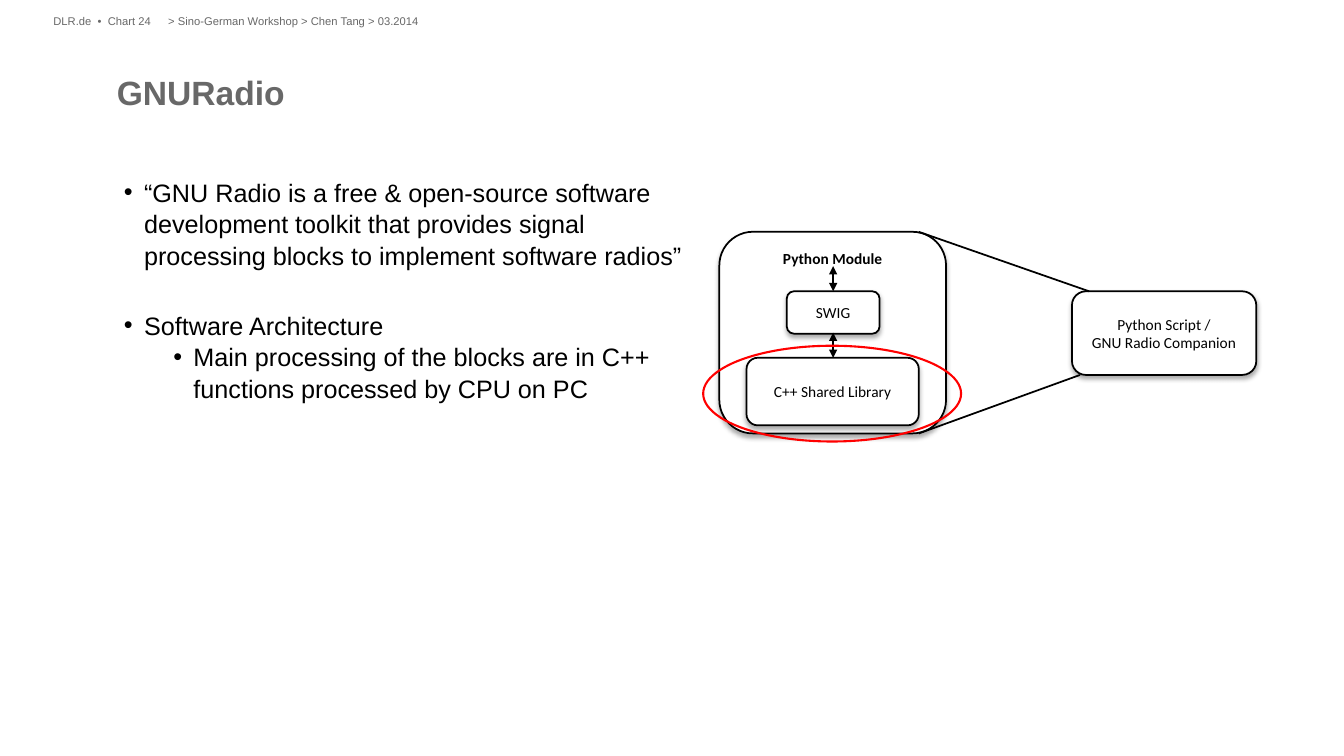
from lxml.etree import SubElement
from pptx import Presentation
from pptx.dml.color import RGBColor
from pptx.enum.shapes import MSO_CONNECTOR, MSO_SHAPE
from pptx.enum.text import MSO_ANCHOR, PP_ALIGN
from pptx.oxml.ns import qn
from pptx.util import Inches, Pt

BLACK, WHITE, GREY, RED = "000000", "FFFFFF", "686868", "FF0000"


def rgb(value):
    return RGBColor.from_string(value)


def add_xml(parent, tag, **attributes):
    return SubElement(parent, qn(tag), attributes)


class SlideBuilder:
    text_font = "Arial"
    diagram_font = "Calibri"
    line_width = 1.25

    def __init__(self, slide):
        self.s = slide

    def style(self, p, size, color=BLACK, name=None, bold=False):
        f = p.font
        f.name, f.size, f.bold = name or self.text_font, Pt(size), bold
        f.color.rgb = rgb(color)

    def frame(self, sp, anchor=MSO_ANCHOR.TOP, inset=0.0):
        tf = sp.text_frame
        tf.word_wrap = True
        tf.vertical_anchor = anchor
        tf.margin_left = tf.margin_right = Inches(inset)
        tf.margin_top = tf.margin_bottom = Inches(inset)
        return tf

    def title(self, text, x, y, w, h):
        sp = self.s.shapes.title
        sp.left, sp.top, sp.width, sp.height = map(Inches, (x, y, w, h))
        p = self.frame(sp).paragraphs[0]
        p.text, p.alignment = text, PP_ALIGN.LEFT
        self.style(p, 24, GREY, bold=True)

    def text_box(self, x, y, w, h):
        return self.frame(self.s.shapes.add_textbox(*map(Inches, (x, y, w, h))))

    def header(self, text, x, w):
        p = self.text_box(x, 0.14, w, 0.16).paragraphs[0]
        p.text = text
        self.style(p, 8, GREY)

    def bullets(self, items, x, y, w, h):
        """Items are (text, level, left margin in inches, space before in points)."""
        tf = self.text_box(x, y, w, h)
        for i, (text, level, margin, before) in enumerate(items):
            p = tf.add_paragraph() if i else tf.paragraphs[0]
            p.text, p.level = text, level
            p.line_spacing, p.space_before = 1.05, Pt(before)
            pPr = p._p.get_or_add_pPr()
            pPr.set("marL", str(Inches(margin)))
            pPr.set("indent", str(Inches(-0.2)))
            add_xml(pPr, "a:buFont", typeface="Arial")
            add_xml(pPr, "a:buChar", char="•")
            self.style(p, 18)

    def outline(self, kind, x, y, w, h, color, width):
        sp = self.s.shapes.add_shape(kind, *map(Inches, (x, y, w, h)))
        sp.shadow.inherit = False
        sp.fill.background()
        sp.line.color.rgb, sp.line.width = rgb(color), Pt(width)
        return sp

    def box(self, lines, x, y, w, h, anchor=MSO_ANCHOR.MIDDLE, bold=False):
        sp = self.outline(MSO_SHAPE.ROUNDED_RECTANGLE, x, y, w, h, BLACK, self.line_width)
        sp.fill.solid()
        sp.fill.fore_color.rgb = rgb(WHITE)
        effects = sp._element.spPr.find(qn("a:effectLst"))
        shadow = add_xml(effects, "a:outerShdw", blurRad=str(Pt(3.5)), dist=str(Pt(2.2)),
                         dir="5400000", rotWithShape="0")
        add_xml(add_xml(shadow, "a:srgbClr", val=BLACK), "a:alpha", val="32000")
        tf = self.frame(sp, anchor, 0.07)
        for i, line in enumerate(lines):
            p = tf.add_paragraph() if i else tf.paragraphs[0]
            p.text, p.alignment = line, PP_ALIGN.CENTER
            self.style(p, 11, name=self.diagram_font, bold=bold)

    def line(self, x1, y1, x2, y2, arrows=False):
        c = self.s.shapes.add_connector(MSO_CONNECTOR.STRAIGHT, *map(Inches, (x1, y1, x2, y2)))
        c.line.color.rgb, c.line.width = rgb(BLACK), Pt(self.line_width)
        if arrows:
            for end in ("a:headEnd", "a:tailEnd"):
                add_xml(c.line._get_or_add_ln(), end, type="triangle")
        add_xml(c._element.spPr, "a:effectLst")


def main():
    prs = Presentation()
    prs.slide_width, prs.slide_height = Inches(13.34), Inches(7.5)
    b = SlideBuilder(prs.slides.add_slide(prs.slide_layouts[5]))

    b.header("DLR.de  •  Chart 24", 0.53, 1.14)
    b.header("> Sino-German Workshop > Chen Tang > 03.2014", 1.67, 11.13)
    b.title("GNURadio", 1.16, 0.71, 11.65, 0.81)
    b.bullets([
        ("“GNU Radio is a free & open-source software development toolkit that provides "
         "signal processing blocks to implement software radios”", 0, 0.2, 0),
        ("Software Architecture", 0, 0.2, 27),
        ("Main processing of the blocks are in C++ functions processed by CPU on PC",
         1, 0.69, 0),
    ], 1.23, 1.74, 5.59, 4.74)

    b.box(["Python Module"], 7.14, 2.3, 2.25, 2, MSO_ANCHOR.TOP, bold=True)
    b.box(["C++ Shared Library"], 7.41, 3.55, 1.71, 0.67)
    b.box(["Python Script /", "GNU Radio Companion"], 10.64, 2.89, 1.83, 0.83)
    b.box(["SWIG"], 7.81, 2.89, 0.92, 0.42)
    b.line(10.72, 3.72, 9.12, 4.3)
    b.line(10.81, 2.89, 9.12, 2.3)
    for top in (2.64, 3.3):
        b.line(8.27, top, 8.27, top + 0.25, arrows=True)
    b.outline(MSO_SHAPE.OVAL, 6.98, 3.43, 2.56, 0.95, RED, 1.5)

    prs.save("out.pptx")


if __name__ == "__main__":
    main()
